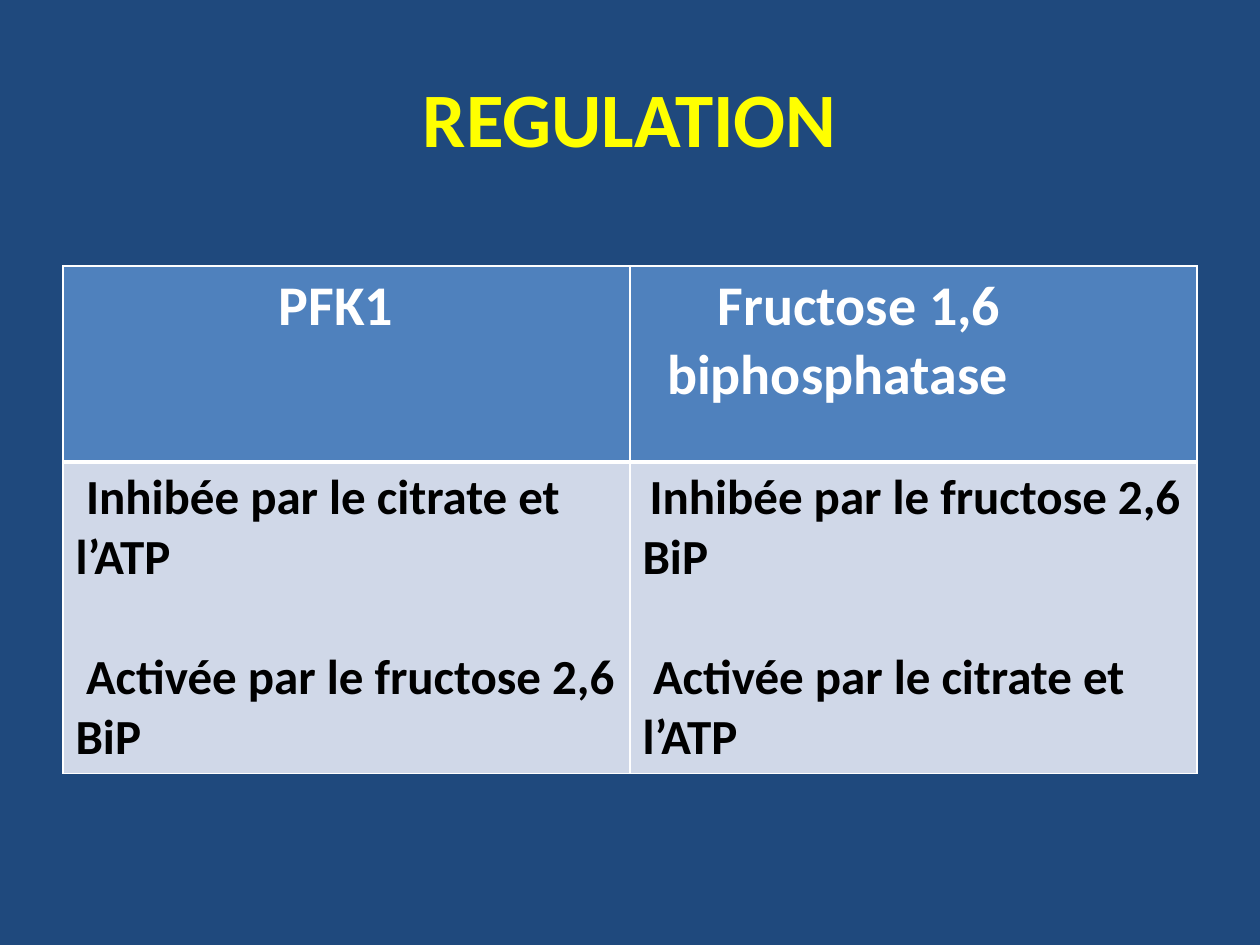
from dataclasses import dataclass

from lxml import etree
from pptx import Presentation
from pptx.dml.color import RGBColor
from pptx.enum.text import MSO_ANCHOR, PP_ALIGN
from pptx.oxml.ns import qn
from pptx.util import Pt

MIDDLE = MSO_ANCHOR.MIDDLE
CENTER = PP_ALIGN.CENTER


@dataclass(frozen=True)
class Theme:
    font: str = "Calibri"
    back: str = "1F497D"
    title: str = "FFFF00"
    head: str = "4F81BD"
    body: str = "D0D8E8"
    light: str = "FFFFFF"
    dark: str = "000000"
    title_size: int = 44
    head_size: int = 32
    body_size: int = 28


@dataclass(frozen=True)
class Line:
    text: str
    first: float = 0   # first-line indent, points
    left: float = 0    # left margin, points
    before: float = 0  # space above, points


@dataclass(frozen=True)
class Style:
    fill: str
    ink: str
    size: int
    top: float
    bottom: float


THEME = Theme()
HEAD = Style(THEME.head, THEME.light, THEME.head_size, 1, 3)
BODY = Style(THEME.body, THEME.dark, THEME.body_size, 3, 1)
GAP = 34  # one body line

# Table content, row by row
ROWS = [
    (HEAD, 112, [
        [Line("PFK1", first=116)],
        [Line("Fructose 1,6 biphosphatase", first=29, left=14)],
    ]),
    (BODY, 178, [
        [Line("Inhibée par le citrate et l’ATP", first=6),
         Line("Activée par le fructose 2,6 BiP", first=6, before=GAP)],
        [Line("Inhibée par le fructose 2,6 BiP", first=4),
         Line("Activée par le citrate et l’ATP", first=6, before=GAP)],
    ]),
]


def style_runs(para, size: int, ink: str) -> None:
    for run in para.runs:
        run.font.name = THEME.font
        run.font.size = Pt(size)
        run.font.bold = True
        run.font.color.rgb = RGBColor.from_string(ink)


def add_edge(cell, side: str, width: float) -> None:
    props = cell._tc.get_or_add_tcPr()
    edge = etree.SubElement(props, qn("a:ln" + side), w=str(Pt(width)))
    fill = etree.SubElement(edge, qn("a:solidFill"))
    etree.SubElement(fill, qn("a:srgbClr"), val=THEME.light)


def fill_cell(cell, lines: list[Line], style: Style) -> None:
    # Borders come before the fill in the cell's XML
    for side, width in zip("LRTB", (1, 1, style.top, style.bottom)):
        add_edge(cell, side, width)
    cell.fill.solid()
    cell.fill.fore_color.rgb = RGBColor.from_string(style.fill)
    cell.text_frame.text = "\n".join(line.text for line in lines)
    for para, line in zip(cell.text_frame.paragraphs, lines):
        props = para._p.get_or_add_pPr()
        props.set("marL", str(Pt(line.left)))
        props.set("indent", str(Pt(line.first)))
        para.space_before = Pt(line.before)
        style_runs(para, style.size, style.ink)


def add_title(slide, text: str) -> None:
    box = slide.shapes.add_textbox(Pt(36), Pt(21.6), Pt(648), Pt(90))
    frame = box.text_frame
    frame.word_wrap = True
    frame.vertical_anchor = MIDDLE
    frame.text = text
    para = frame.paragraphs[0]
    para.alignment = CENTER
    style_runs(para, THEME.title_size, THEME.title)


def add_grid(slide) -> None:
    tall = sum(height for _, height, _ in ROWS)
    shape = slide.shapes.add_table(
        len(ROWS), 2, Pt(36), Pt(152), Pt(648), Pt(tall))
    table = shape.table
    for row, (style, height, cells) in enumerate(ROWS):
        table.rows[row].height = Pt(height)
        for col, lines in enumerate(cells):
            fill_cell(table.cell(row, col), lines, style)


def main() -> None:
    deck = Presentation()
    deck.slide_width, deck.slide_height = Pt(720), Pt(540)
    slide = deck.slides.add_slide(deck.slide_layouts[6])
    back = slide.background.fill
    back.solid()
    back.fore_color.rgb = RGBColor.from_string(THEME.back)
    add_title(slide, "REGULATION")
    add_grid(slide)
    deck.save("out.pptx")


if __name__ == "__main__":
    main()
